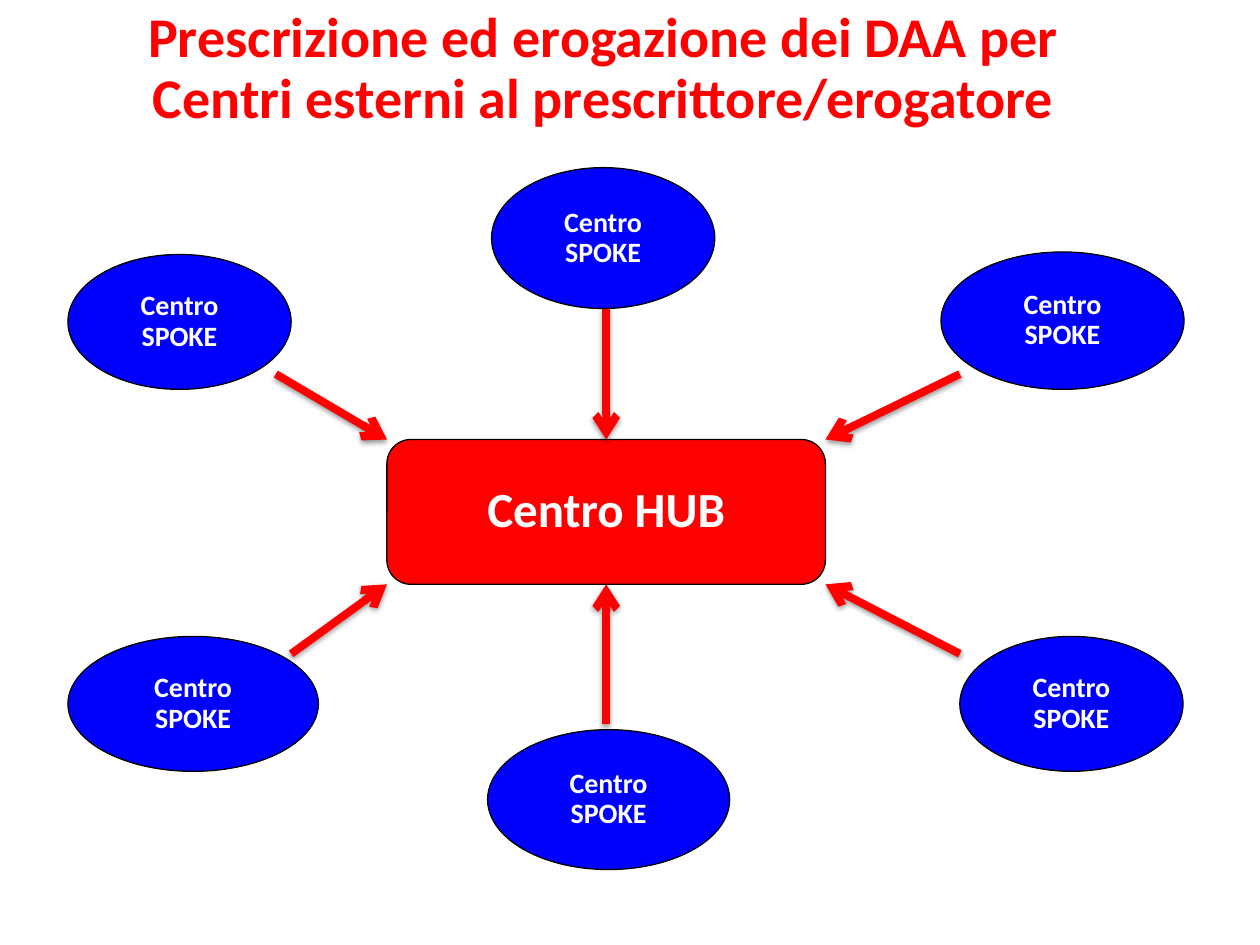
from dataclasses import dataclass

from lxml import etree
from pptx import Presentation
from pptx import util as u
from pptx.dml.color import RGBColor
from pptx.enum import shapes, text
from pptx.oxml import parse_xml
from pptx.oxml.ns import qn


@dataclass(frozen=True)
class Theme:
    font: str = "Calibri"
    red: str = "FF0000"
    blue: str = "0000FF"
    white: str = "FFFFFF"
    black: str = "000000"
    title: int = 32
    hub: int = 28
    spoke: int = 16
    edge: float = 0.75
    arrow: float = 4.5


THEME = Theme()
KIND = shapes.MSO_SHAPE

# left, top, width, height in cm
TITLE = (1.37, 0.51, 21.59, 1.8)
HUB = (7.8, 8.86, 8.84, 2.92)

# Each spoke: its box, where its arrow starts, and the side or corner of
# the hub it points to (0 = left or top, 0.5 = middle, 1 = right or bottom)
SPOKES = [
    ((1.37, 5.13, 4.5, 2.72), (5.56, 7.54), (0, 0)),
    ((9.91, 3.38, 4.5, 2.84), (12.22, 6.22), (0.5, 0)),
    ((18.97, 5.08, 4.9, 2.77), (19.35, 7.54), (1, 0)),
    ((1.37, 12.83, 5.05, 2.72), (5.87, 13.18), (0, 1)),
    ((9.83, 14.71, 4.88, 2.82), (12.22, 14.6), (0.5, 1)),
    ((19.35, 12.83, 4.5, 2.72), (19.35, 13.18), (1, 1)),
]

SHADOW = (
    '<a:effectLst xmlns:a="http://schemas.openxmlformats.org/drawingml/2006/main">'
    '<a:outerShdw blurRad="39370" dist="20320" dir="5400000" rotWithShape="0">'
    '<a:srgbClr val="000000"><a:alpha val="38000"/></a:srgbClr>'
    "</a:outerShdw></a:effectLst>"
)


def color(code):
    return RGBColor.from_string(code)


def cm(*sizes):
    return [u.Cm(size) for size in sizes]


def write(shape, words, *, size, ink):
    frame = shape.text_frame
    frame.word_wrap = True
    frame.vertical_anchor = text.MSO_ANCHOR.MIDDLE
    para = frame.paragraphs[0]
    para.alignment = text.PP_ALIGN.CENTER
    para.line_spacing = 0.9
    run = para.add_run()
    run.text = words
    font = run.font
    font.name, font.size, font.bold = THEME.font, u.Pt(size), True
    font.color.rgb = color(ink)


def add_node(slide, kind, box, words, *, fill, size):
    node = slide.shapes.add_shape(kind, *cm(*box))
    node.shadow.inherit = False
    node.fill.solid()
    node.fill.fore_color.rgb = color(fill)
    node.line.color.rgb = color(THEME.black)
    node.line.width = u.Pt(THEME.edge)
    write(node, words, size=size, ink=THEME.white)
    return node


def add_arrow(slide, start, hub, side):
    """Draw an arrow to the hub, joined to it at a middle point."""
    left, top, width, height = HUB
    across, down = side
    end = (left + across * width, top + down * height)
    arrow = slide.shapes.add_connector(
        shapes.MSO_CONNECTOR.STRAIGHT, *cm(*start, *end)
    )
    if across == 0.5:
        arrow.end_connect(hub, 2 * down)
    arrow.line.color.rgb = color(THEME.red)
    arrow.line.width = u.Pt(THEME.arrow)
    props = arrow.line._get_or_add_ln()
    etree.SubElement(props, qn("a:tailEnd"), type="arrow")
    arrow._element.spPr.append(parse_xml(SHADOW))


def main():
    deck = Presentation()
    deck.slide_width, deck.slide_height = cm(25.4, 19.05)
    slide = deck.slides.add_slide(deck.slide_layouts[6])

    hub = add_node(slide, KIND.ROUNDED_RECTANGLE, HUB, "Centro HUB",
                   fill=THEME.red, size=THEME.hub)
    title = slide.shapes.add_textbox(*cm(*TITLE))
    write(title, "Prescrizione ed erogazione dei DAA per "
          "Centri esterni al prescrittore/erogatore",
          size=THEME.title, ink=THEME.red)

    for box, start, side in SPOKES:
        add_node(slide, KIND.OVAL, box, "Centro SPOKE",
                 fill=THEME.blue, size=THEME.spoke)
        add_arrow(slide, start, hub, side)

    deck.save("out.pptx")


if __name__ == "__main__":
    main()
